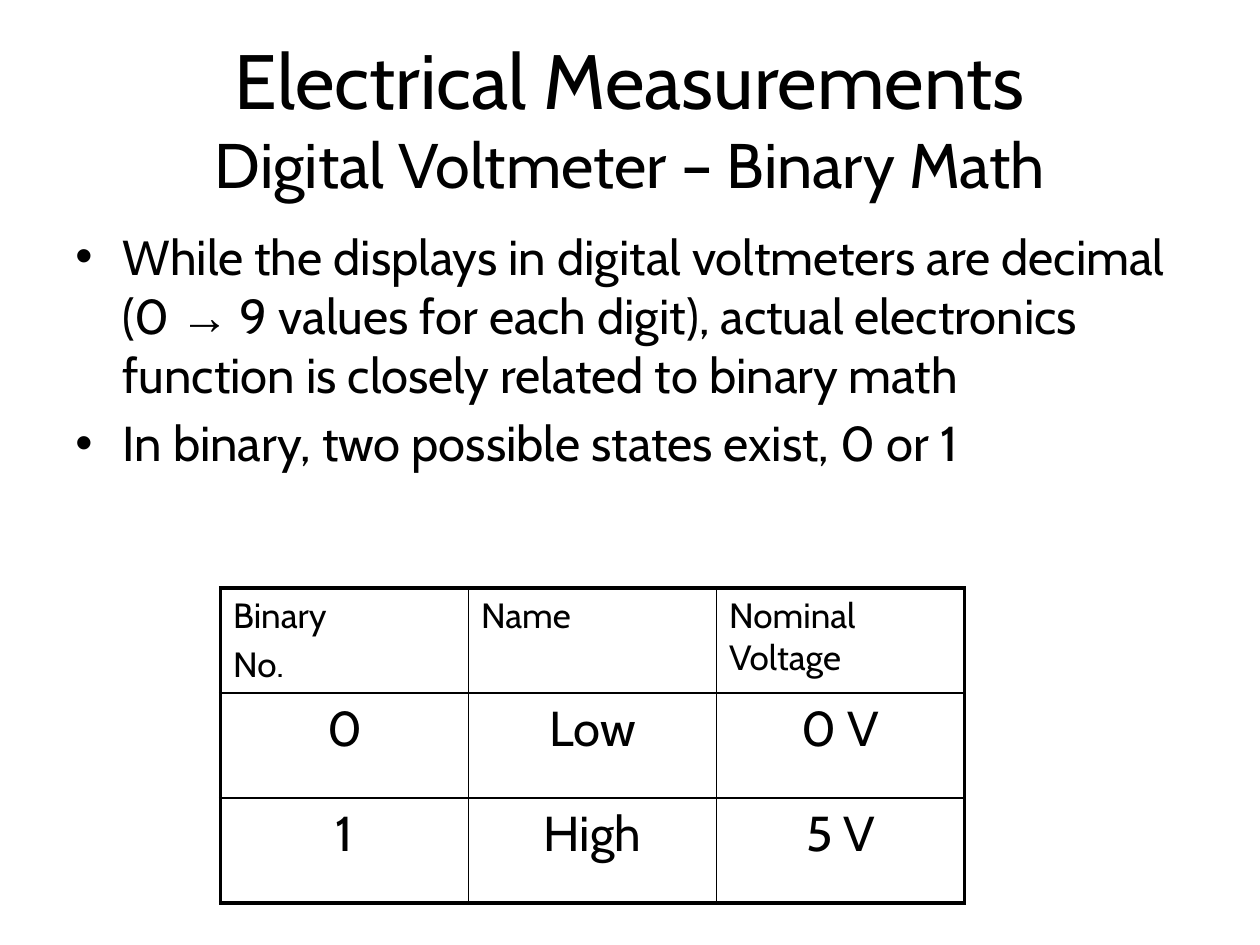
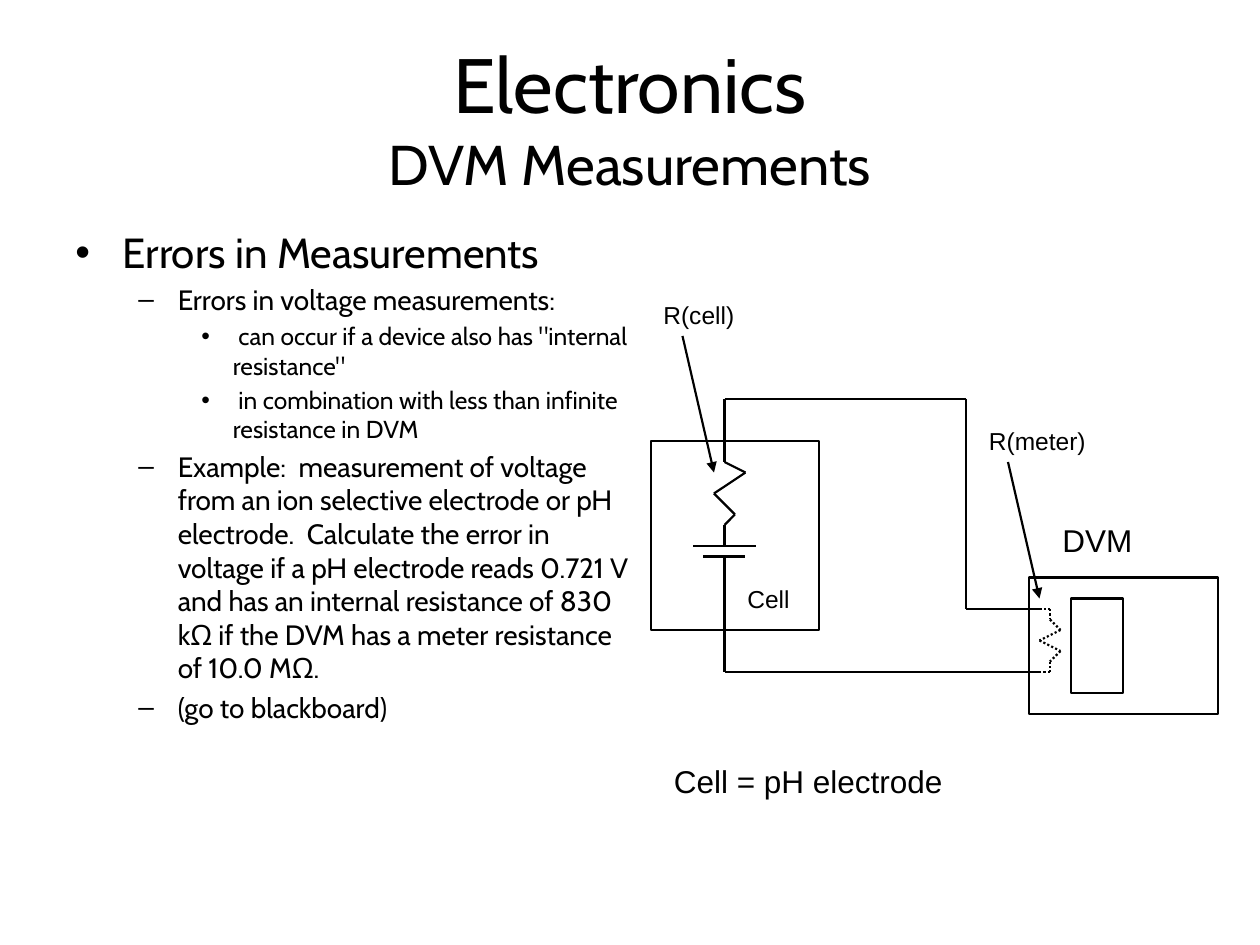
"""Build two lecture slides on digital voltmeters."""
import pptx
import pptx.dml.color
import pptx.enum.dml
import pptx.enum.shapes
import pptx.enum.text
import pptx.oxml
import pptx.oxml.ns
import pptx.util

EMU_PER_PX = 9525
COLORS = {"ink": "000000", "paper": "FFFFFF"}
HEADING_FONT = "Cabin"
LABEL_FONT = "Arial"
LINE_POINTS = 1.25
BULLETS = [("•", 36, 36), ("–", 78, 30), ("•", 120, 24)]
TABLE_ROWS = [
    ["Binary\nNo.", "Name", "Nominal Voltage"],
    ["0", "Low", "0 V"],
    ["1", "High", "5 V"],
]
BINARY_BULLETS = [
    (0, 28, "While the displays in digital voltmeters are decimal (0 → 9 values for each digit), "
            "actual electronics function is closely related to binary math"),
    (0, 28, "In binary, two possible states exist, 0 or 1"),
]
ERROR_BULLETS = [
    (0, 24, "Errors in Measurements"),
    (1, 16, "Errors in voltage measurements:"),
    (2, 14, " can occur if a device also has \"internal resistance\""),
    (2, 14, " in combination with less than infinite resistance in DVM"),
    (1, 16, "Example:  measurement of voltage from an ion selective electrode or pH electrode.  "
            "Calculate the error in voltage if a pH electrode reads 0.721 V and has an internal "
            "resistance of 830 kΩ if the DVM has a meter resistance of 10.0 MΩ."),
    (1, 16, "(go to blackboard)"),
]


def px(*lengths):
    """Return the lengths in EMU."""
    return [pptx.util.Emu(length * EMU_PER_PX) for length in lengths]


def rgb(name):
    """Return a named colour."""
    return pptx.dml.color.RGBColor.from_string(COLORS[name])


def add_child(parent, tag, **attributes):
    """Append a drawing element and return it."""
    child = pptx.oxml.ns.qn("a:" + tag)
    element = parent.makeelement(child, attributes)
    parent.append(element)
    return element


def style_paragraph(paragraph, size, font=HEADING_FONT, centred=False):
    """Set the font and alignment of a paragraph."""
    paragraph.font.name = font
    paragraph.font.size = pptx.util.Pt(size)
    paragraph.font.color.rgb = rgb("ink")
    if centred:
        paragraph.alignment = pptx.enum.text.PP_ALIGN.CENTER


def add_text_frame(slide, box):
    """Add a wrapping text box and return its frame."""
    frame = slide.shapes.add_textbox(*px(*box)).text_frame
    frame.word_wrap = True
    return frame


def next_paragraph(frame, index, size):
    """Return the paragraph at index, spaced from the one before it."""
    if index == 0:
        return frame.paragraphs[0]
    paragraph = frame.add_paragraph()
    paragraph.space_before = pptx.util.Pt(0.2 * size)
    return paragraph


def add_title(slide, heading, subheading, subheading_size):
    """Add the two-line centred title."""
    frame = add_text_frame(slide, (48, 29, 864, 120))
    frame.vertical_anchor = pptx.enum.text.MSO_ANCHOR.MIDDLE
    paragraph = frame.paragraphs[0]
    style_paragraph(paragraph, 44, centred=True)
    paragraph.add_run().text = heading
    paragraph.add_line_break()
    run = paragraph.add_run()
    run.text = subheading
    run.font.size = pptx.util.Pt(subheading_size)


def add_bullets(slide, width, bullets):
    """Add the body list, given as (level, size, text)."""
    frame = add_text_frame(slide, (48, 168, width, 475))
    for index, (level, size, text) in enumerate(bullets):
        paragraph = next_paragraph(frame, index, size)
        paragraph.level = level
        mark, margin, hanging = BULLETS[level]
        properties = paragraph._p.get_or_add_pPr()
        properties.set("marL", str(margin * EMU_PER_PX))
        properties.set("indent", str(-hanging * EMU_PER_PX))
        add_child(properties, "buFont", typeface=LABEL_FONT)
        add_child(properties, "buChar", char=mark)
        style_paragraph(paragraph, size)
        for part in filter(None, text.partition("→")):
            run = paragraph.add_run()
            run.text = part
            if part == "→":
                run.font.name = LABEL_FONT


def set_borders(cell, row, column, last):
    """Draw thick borders on the table's edge and thin ones inside."""
    properties = cell._tc.get_or_add_tcPr()
    edges = {"lnL": column == 0, "lnR": column == last,
             "lnT": row == 0, "lnB": row == last}
    for tag, is_outer in edges.items():
        points = 2.25 if is_outer else 1
        border = add_child(properties, tag, w=str(pptx.util.Pt(points)))
        fill = add_child(border, "solidFill")
        add_child(fill, "srgbClr", val=COLORS["ink"])


def add_state_table(slide):
    """Add the table of binary states and their voltages."""
    count = len(TABLE_ROWS)
    table = slide.shapes.add_table(count, count, *px(168, 448, 567, 240)).table
    table.first_row = False
    table.horz_banding = False
    for row, texts in enumerate(TABLE_ROWS):
        size = 28 if row else 20
        for column, text in enumerate(texts):
            cell = table.cell(row, column)
            for index, line in enumerate(text.split("\n")):
                paragraph = next_paragraph(cell.text_frame, index, size)
                paragraph.text = line
                style_paragraph(paragraph, size, centred=row > 0)
            set_borders(cell, row, column, count - 1)
            cell.fill.solid()
            cell.fill.fore_color.rgb = rgb("paper")


def add_wire(slide, points, dotted=False, arrow=False):
    """Join the points by straight connectors."""
    for start, end in zip(points, points[1:]):
        connector = slide.shapes.add_connector(
            pptx.enum.shapes.MSO_CONNECTOR.STRAIGHT, *px(*start, *end))
        connector.line.color.rgb = rgb("ink")
        connector.line.width = pptx.util.Pt(LINE_POINTS)
        if dotted:
            connector.line.dash_style = pptx.enum.dml.MSO_LINE.ROUND_DOT
        if arrow:
            add_child(connector.line._get_or_add_ln(), "tailEnd", type="triangle")
        add_child(connector._element.spPr, "effectLst")


def add_outline(slide, box):
    """Add an unfilled rectangle."""
    shape = slide.shapes.add_shape(pptx.enum.shapes.MSO_SHAPE.RECTANGLE, *px(*box))
    shape.shadow.inherit = False
    shape.fill.background()
    shape.line.color.rgb = rgb("ink")
    shape.line.width = pptx.util.Pt(LINE_POINTS)


def add_label(slide, text, size, box):
    """Add a diagram label."""
    paragraph = add_text_frame(slide, box).paragraphs[0]
    paragraph.text = text
    style_paragraph(paragraph, size, LABEL_FONT)


def add_pointer_label(slide, text, left, top):
    """Add a label with an arrow down to the resistor it names."""
    add_label(slide, text, 14, (left, top, 128, 32))
    start = (left + 24, top + 32)
    add_wire(slide, [start, (start[0] + 24, start[1] + 104)], arrow=True)


def add_circuit(slide):
    """Draw the cell wired to the voltmeter."""
    cell_x, corner_x, meter_x = 552, 736, 792
    upper_y, lower_y = 464, 512
    add_wire(slide, [(528, 416), (576, 416)])
    add_wire(slide, [(536, 424), (568, 424)])
    add_wire(slide, [(cell_x, 416), (cell_x, 400), (560, 392), (544, 376), (568, 360),
                     (cell_x, 352), (cell_x, 304), (corner_x, 304),
                     (corner_x, upper_y), (meter_x, upper_y)])
    add_wire(slide, [(cell_x, 424), (cell_x, lower_y), (meter_x, lower_y)])
    for box in [(496, 336, 128, 144), (784, 440, 144, 104), (816, 456, 40, 72)]:
        add_outline(slide, box)
    zigzag = [800, 800, 808, 792, 808, 800, 800]
    resistor = [(x, upper_y + 8 * step) for step, x in enumerate(zigzag)]
    add_wire(slide, [(meter_x, upper_y), *resistor, (meter_x, lower_y)], dotted=True)
    add_label(slide, "Cell", 14, (560, 440, 56, 32))
    add_label(slide, "DVM", 18, (800, 392, 96, 38))
    add_label(slide, "Cell = pH electrode", 18, (504, 576, 248, 38))
    add_pointer_label(slide, "R(cell)", 496, 224)
    add_pointer_label(slide, "R(meter)", 744, 320)


def main():
    """Build and save the presentation."""
    presentation = pptx.Presentation()
    presentation.slide_width, presentation.slide_height = px(960, 720)
    blank = presentation.slide_layouts[6]

    slide = presentation.slides.add_slide(blank)
    add_title(slide, "Electrical Measurements", "Digital Voltmeter – Binary Math", 36)
    add_bullets(slide, 864, BINARY_BULLETS)
    add_state_table(slide)

    slide = presentation.slides.add_slide(blank)
    add_title(slide, "Electronics", "DVM Measurements", 32)
    add_bullets(slide, 448, ERROR_BULLETS)
    add_circuit(slide)

    presentation.save("out.pptx")


if __name__ == "__main__":
    main()
